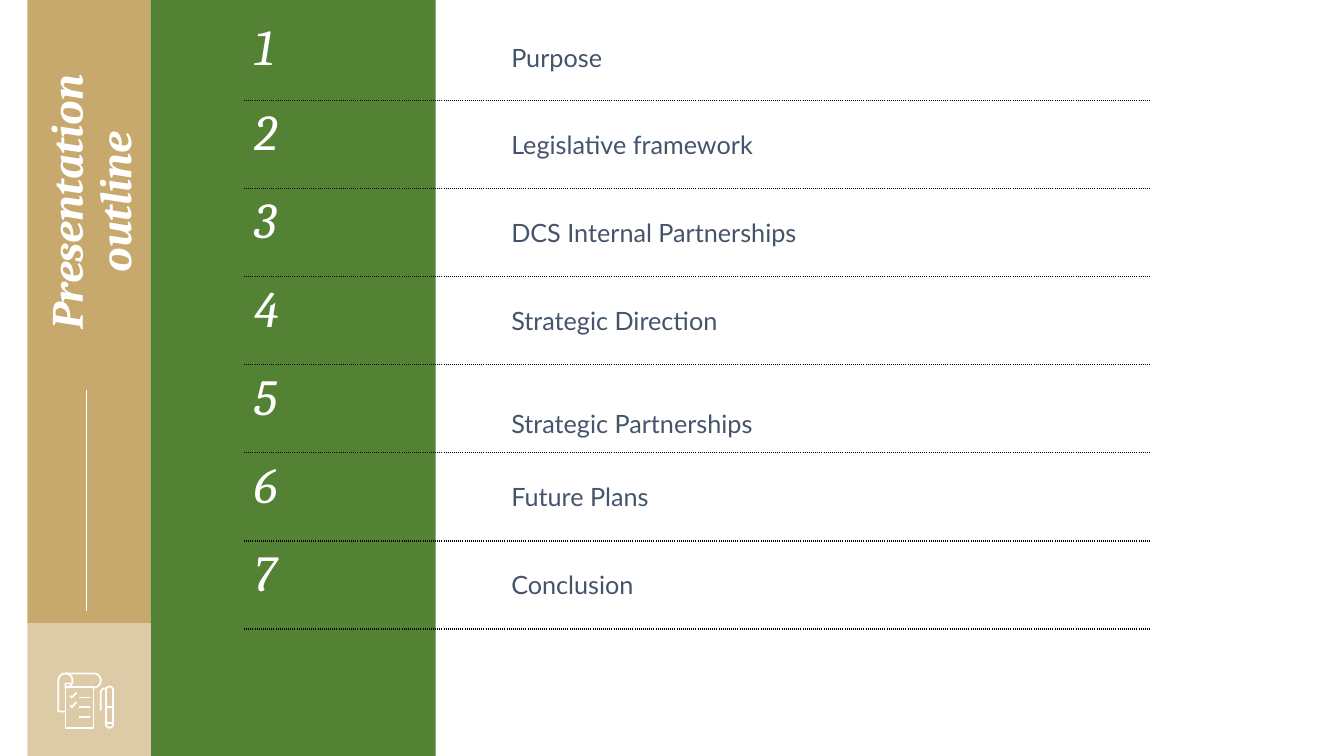
import math

import lxml.etree
import pptx
import pptx.dml.color
import pptx.enum.shapes
import pptx.enum.text
import pptx.oxml.ns
import pptx.util

Cm = pptx.util.Cm
Pt = pptx.util.Pt
qn = pptx.oxml.ns.qn

COLORS = {
    "gold": "C7A96E",
    "sand": "DDCBA8",
    "green": "548235",
    "white": "FFFFFF",
    "slate": "44546A",
    "black": "000000",
}
NO_GRID_STYLE = "{2D5ABB26-0587-4C30-8999-92F81FD0307C}"
TOPICS = [
    "Purpose",
    "Legislative framework",
    "DCS Internal Partnerships",
    "Strategic Direction",
    "Strategic Partnerships",
    "Future Plans",
    "Conclusion",
]
LOWERED_TOPIC = "Strategic Partnerships"


def rgb(name):
    return pptx.dml.color.RGBColor.from_string(COLORS[name])


def style_font(font, name, size, color, bold=False, italic=False):
    font.name = name
    font.size = Pt(size)
    font.bold = bold
    font.italic = italic
    font.color.rgb = rgb(color)


def add_panel(shapes, x, y, w, h, color):
    sp = shapes.add_shape(pptx.enum.shapes.MSO_SHAPE.RECTANGLE, Cm(x), Cm(y), Cm(w), Cm(h))
    sp.shadow.inherit = False
    sp.fill.solid()
    sp.fill.fore_color.rgb = rgb(color)
    sp.line.fill.background()


def add_line(shapes, x1, y1, x2, y2, width):
    line = shapes.add_connector(
        pptx.enum.shapes.MSO_CONNECTOR.STRAIGHT, Cm(x1), Cm(y1), Cm(x2), Cm(y2))
    line.line.color.rgb = rgb("white")
    line.line.width = Pt(width)
    lxml.etree.SubElement(line._element.spPr, qn("a:effectLst"))


def arc(cx, cy, radius, start, end, steps=16):
    """Points along a circle; angles in degrees, clockwise from the right."""
    angles = [math.radians(start + (end - start) * i / steps) for i in range(steps + 1)]
    return [(cx + radius * math.cos(a), cy + radius * math.sin(a)) for a in angles]


def add_outline(shapes, points, close=False):
    points = [(Cm(x), Cm(y)) for x, y in points]
    builder = shapes.build_freeform(*points[0])
    builder.add_line_segments(points[1:], close=close)
    sp = builder.convert_to_shape()
    sp.shadow.inherit = False
    sp.fill.background()
    sp.line.color.rgb = rgb("white")
    sp.line.width = Pt(1.25)


def add_title(shapes, text):
    sp = shapes.add_textbox(Cm(-2.39), Cm(3.86), Cm(9.45), Cm(2.46))
    sp.rotation = 270
    tf = sp.text_frame
    tf.word_wrap = True
    tf.margin_left = tf.margin_right = tf.margin_top = tf.margin_bottom = 0
    tf.vertical_anchor = pptx.enum.text.MSO_ANCHOR.MIDDLE
    p = tf.paragraphs[0]
    p.text = text
    p.alignment = pptx.enum.text.PP_ALIGN.CENTER
    p.line_spacing = 0.9
    style_font(p.font, "Cambria", 32, "white", bold=True, italic=True)


def add_checklist_icon(slide):
    shapes = slide.shapes.add_group_shape().shapes
    # Sheet and its rolled top
    add_outline(shapes, [(1.65, 17.32), (2.36, 17.32), (2.36, 18.34), (1.65, 18.34)], close=True)
    add_outline(shapes, [(1.65, 17.93), (1.47, 17.93)]
                + arc(1.65, 17.15, 0.18, 180, 450)
                + [(1.65, 17.22), (1.83, 17.22)])
    add_outline(shapes, arc(2.36, 17.15, 0.18, 90, -90) + [(1.65, 16.97)])
    # Written lines and ticks
    for i in range(3):
        y = 17.58 + 0.24 * i
        add_line(shapes, 2.0, y, 2.26, y, 1.25)
        if i < 2:
            add_outline(shapes, [(1.77, y - 0.05), (1.81, y), (1.93, y - 0.13)])
    # Pen with its clip
    add_outline(shapes, arc(2.76, 17.39, 0.09, 180, 360) + arc(2.76, 18.25, 0.09, 0, 180),
                close=True)
    for y in (17.81, 18.21):
        add_line(shapes, 2.67, y, 2.85, y, 1.25)
    add_outline(shapes, [(2.54, 17.91)] + arc(2.64, 17.45, 0.1, 180, 270) + [(2.67, 17.35)])


def add_dotted_bottom(cell):
    ln = lxml.etree.Element(qn("a:lnB"), w=str(Pt(1)))
    fill = lxml.etree.SubElement(ln, qn("a:solidFill"))
    lxml.etree.SubElement(fill, qn("a:srgbClr"), val=COLORS["black"])
    lxml.etree.SubElement(ln, qn("a:prstDash"), val="sysDot")
    cell._tc.get_or_add_tcPr().insert(0, ln)


def fill_cell(cell, text, font_name, size, color, italic=False):
    cell.fill.background()
    add_dotted_bottom(cell)
    p = cell.text_frame.paragraphs[0]
    p.text = text
    style_font(p.font, font_name, size, color, italic=italic)


def add_outline_table(shapes, topics):
    first_height, row_height = 2.15, 2.22
    height = first_height + row_height * (len(topics) - 1)
    table = shapes.add_table(len(topics), 2, Cm(6.15), Cm(0.38), Cm(22.83), Cm(height)).table
    table.first_row = table.horz_banding = False
    table._tbl.tblPr.find(qn("a:tableStyleId")).text = NO_GRID_STYLE
    table.columns[0].width = Cm(6.48)
    table.columns[1].width = Cm(16.35)
    for i, topic in enumerate(topics):
        table.rows[i].height = Cm(row_height if i else first_height)
        number, label = table.cell(i, 0), table.cell(i, 1)
        fill_cell(number, str(i + 1), "Cambria", 36, "white", italic=True)
        fill_cell(label, topic, "Lato", 18, "slate")
        label.vertical_anchor = pptx.enum.text.MSO_ANCHOR.MIDDLE
        if topic == LOWERED_TOPIC:
            label.margin_top = Cm(0.89)


def main():
    prs = pptx.Presentation()
    prs.slide_width, prs.slide_height = Cm(33.87), Cm(19.05)
    slide = prs.slides.add_slide(prs.slide_layouts[6])
    shapes = slide.shapes

    # Side panels
    add_panel(shapes, 0.69, 0, 3.11, 15.7, "gold")
    add_panel(shapes, 3.8, 0, 7.18, 19.05, "green")
    add_panel(shapes, 0.69, 15.7, 3.11, 3.35, "sand")

    # Title strip
    add_title(shapes, "Presentation outline")
    add_line(shapes, 2.17, 9.83, 2.17, 15.39, 0.5)
    add_checklist_icon(slide)

    # Numbered topics
    add_outline_table(shapes, TOPICS)

    prs.save("out.pptx")


if __name__ == "__main__":
    main()
